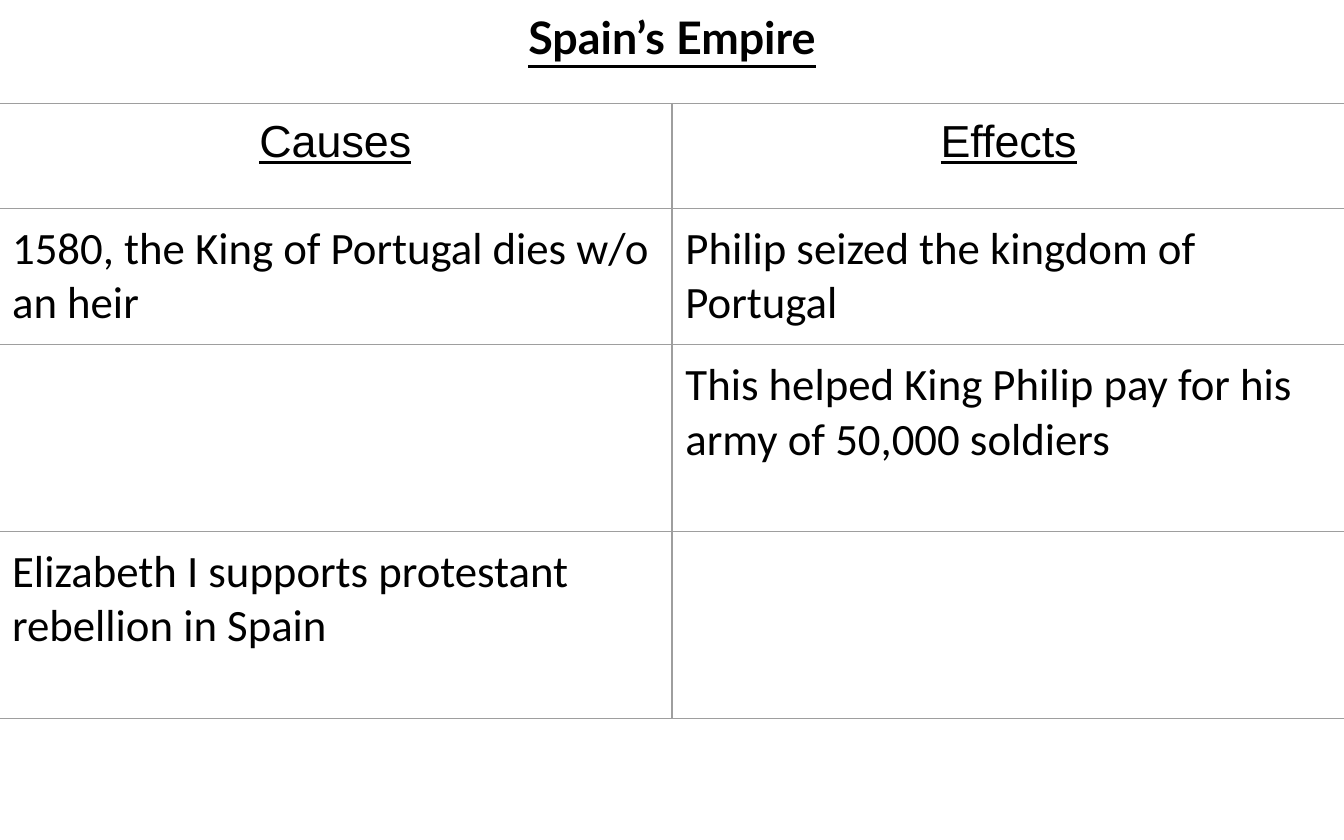
from dataclasses import dataclass

from lxml.etree import SubElement
from pptx import Presentation
from pptx.dml.color import RGBColor
from pptx.enum.text import MSO_ANCHOR as Anchor, MSO_AUTO_SIZE as Fit, PP_ALIGN as Align
from pptx.oxml.ns import qn
from pptx.util import Inches, Pt


@dataclass(frozen=True)
class Theme:
    ink: RGBColor = RGBColor(0, 0, 0)
    rule: str = "9E9E9E"
    line: float = 0.75
    size: float = 24
    pad: float = 0.1
    title: str = "Lato"
    head: str = "Arial"
    body: str = "Calibri"


THEME = Theme()
ROWS = [
    ("Causes", "Effects"),
    ("1580, the King of Portugal dies w/o an heir", "Philip seized the kingdom of Portugal"),
    ("", "This helped King Philip pay for his army of 50,000 soldiers"),
    ("Elizabeth I supports protestant rebellion in Spain", ""),
]
HEIGHTS = [0.78, 0.92, 1.39, 1.39]
WIDTH = 5.01


def set_font(para, name, bold=False, under=False):
    font = para.font
    font.name, font.size = name, Pt(THEME.size)
    font.bold, font.underline = bold, under
    font.color.rgb = THEME.ink


def set_pad(box):
    box.margin_left = box.margin_right = Inches(THEME.pad)
    box.margin_top = box.margin_bottom = Inches(THEME.pad)


def add_title(slide, text):
    title = slide.shapes.title
    title.left, title.top = Inches(0), Inches(0)
    title.width, title.height = Inches(10), Inches(0.55)
    frame = title.text_frame
    frame.text = text
    frame.word_wrap, frame.auto_size = True, Fit.NONE
    frame.vertical_anchor = Anchor.MIDDLE
    set_pad(frame)
    para = frame.paragraphs[0]
    para.alignment = Align.CENTER
    set_font(para, THEME.title, bold=True, under=True)


def set_edges(cell):
    # Borders come before the fill in the cell properties
    props = cell._tc.get_or_add_tcPr()
    for side in ("L", "R", "T", "B"):
        edge = SubElement(props, qn(f"a:ln{side}"), w=str(Pt(THEME.line)))
        fill = SubElement(edge, qn("a:solidFill"))
        SubElement(fill, qn("a:srgbClr"), val=THEME.rule)


def fill_cell(cell, text, head):
    set_pad(cell)
    set_edges(cell)
    cell.fill.background()
    cell.text = text
    para = cell.text_frame.paragraphs[0]
    para.alignment = Align.CENTER if head else Align.LEFT
    set_font(para, THEME.head if head else THEME.body, under=head)


def add_grid(slide):
    cols = len(ROWS[0])
    frame = slide.shapes.add_table(
        len(ROWS), cols, Inches(-0.01), Inches(0.77),
        Inches(WIDTH * cols), Inches(sum(HEIGHTS)))
    table = frame.table
    table.horz_banding = False
    for col in table.columns:
        col.width = Inches(WIDTH)
    for r, (texts, height) in enumerate(zip(ROWS, HEIGHTS)):
        table.rows[r].height = Inches(height)
        for c, text in enumerate(texts):
            fill_cell(table.cell(r, c), text, head=r == 0)


def main():
    deck = Presentation()
    deck.slide_width, deck.slide_height = Inches(10), Inches(6.25)
    slide = deck.slides.add_slide(deck.slide_layouts[5])
    # Causes and effects
    add_grid(slide)
    # Heading
    add_title(slide, "Spain’s Empire")
    deck.save("out.pptx")


if __name__ == "__main__":
    main()
